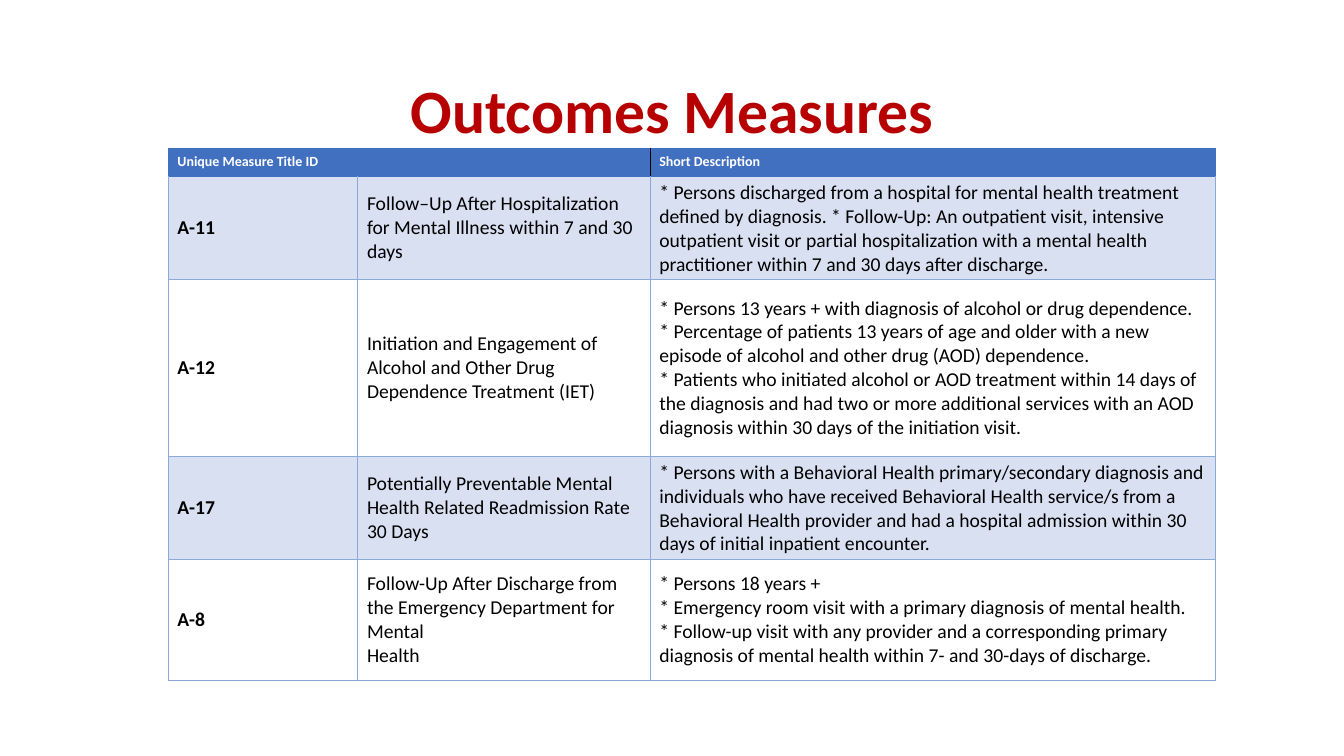
from dataclasses import dataclass, field

from lxml import etree
from pptx import Presentation
from pptx.dml import color
from pptx.enum import text
from pptx.oxml import ns
from pptx.util import Pt


@dataclass(frozen=True)
class Theme:
    face: str = "Calibri"
    title: str = "B70001"
    head: str = "4270C1"
    band: str = "D8E0F2"
    rule: str = "8CA8D8"
    ink: str = "000000"
    white: str = "FFFFFF"
    big: float = 44
    body: float = 14
    small: float = 10


@dataclass(frozen=True)
class Row:
    code: str
    name: str
    about: str
    high: float


@dataclass(frozen=True)
class Edge:
    side: str
    tint: str
    wide: float


@dataclass(frozen=True)
class Grid:
    left: float = 120.2
    top: float = 105.8
    cols: tuple = (135.4, 208.8, 403.9)
    edges: tuple = (0.48, 0.96, 0.73, 0.48)
    pad: dict = field(default_factory=lambda: {
        "margin_left": Pt(6.6), "margin_right": Pt(6.6),
        "margin_top": Pt(3.3), "margin_bottom": Pt(3.3),
        "vertical_anchor": text.MSO_ANCHOR.MIDDLE,
    })


THEME = Theme()
GRID = Grid()
ROWS = [
    Row("Unique Measure Title ID", "", "Short Description", 20.2),
    Row(
        "A-11",
        "Follow–Up After Hospitalization for Mental Illness within 7 and 30 days",
        "* Persons discharged from a hospital for mental health treatment "
        "defined by diagnosis. * Follow-Up: An outpatient visit, intensive "
        "outpatient visit or partial hospitalization with a mental health "
        "practitioner within 7 and 30 days after discharge.",
        73.4,
    ),
    Row(
        "A-12",
        "Initiation and Engagement of Alcohol and Other Drug "
        "Dependence Treatment (IET)",
        "* Persons 13 years + with diagnosis of alcohol or drug dependence.\n"
        "* Percentage of patients 13 years of age and older with a new "
        "episode of alcohol and other drug (AOD) dependence.\n"
        "* Patients who initiated alcohol or AOD treatment within 14 days of "
        "the diagnosis and had two or more additional services with an AOD "
        "diagnosis within 30 days of the initiation visit.",
        126,
    ),
    Row(
        "A-17",
        "Potentially Preventable Mental Health Related Readmission Rate 30 Days",
        "* Persons with a Behavioral Health primary/secondary diagnosis and "
        "individuals who have received Behavioral Health service/s from a "
        "Behavioral Health provider and had a hospital admission within 30 "
        "days of initial inpatient encounter.",
        73.4,
    ),
    Row(
        "A-8",
        "Follow-Up After Discharge from the Emergency Department for Mental\nHealth",
        "* Persons 18 years +\n"
        "* Emergency room visit with a primary diagnosis of mental health.\n"
        "* Follow-up visit with any provider and a corresponding primary "
        "diagnosis of mental health within 7- and 30-days of discharge.",
        86.4,
    ),
]


def assign(item, values: dict) -> None:
    for key, value in values.items():
        setattr(item, key, value)


def style(para, size: float, tint: str, bold: bool) -> None:
    for run in para.runs:
        assign(run.font, {"name": THEME.face, "size": Pt(size), "bold": bold})
        run.font.color.rgb = color.RGBColor.from_string(tint)


def border(cell, edges: list[Edge]) -> None:
    props = cell._tc.get_or_add_tcPr()
    for spot, edge in enumerate(edges):
        line = etree.Element(ns.qn(f"a:ln{edge.side}"), w=str(Pt(edge.wide)))
        fill = etree.SubElement(line, ns.qn("a:solidFill"))
        etree.SubElement(fill, ns.qn("a:srgbClr"), val=edge.tint)
        props.insert(spot, line)


def frame(cell, row: int, col: int) -> None:
    head = row == 0
    tint = THEME.head if head else THEME.rule
    first = 0 if head and col < 2 else col
    last = 2 if head and col < 2 else col + 1
    sides = [
        Edge(side, THEME.ink if head and spot == 2 else tint, GRID.edges[spot])
        for side, spot in (("L", first), ("R", last))
    ]
    roof = Edge("T", THEME.head if row < 2 else tint, 0.61 if head else 0.48)
    border(cell, [*sides, roof, Edge("B", tint, 0.48)])


def paint(cell, row: int) -> None:
    if row and row % 2 == 0:
        cell.fill.background()
        return
    cell.fill.solid()
    shade = THEME.band if row else THEME.head
    cell.fill.fore_color.rgb = color.RGBColor.from_string(shade)


def write(cell, words: str, row: int, col: int) -> None:
    para = cell.text_frame.paragraphs[0]
    para.text = words
    if row:
        style(para, THEME.body, THEME.ink, col == 0)
    else:
        style(para, THEME.small, THEME.white, True)


def title(slide, words: str) -> None:
    box = slide.shapes.add_textbox(Pt(66.2), Pt(28.8), Pt(828), Pt(104.4))
    assign(box.text_frame, {
        "word_wrap": True, "vertical_anchor": text.MSO_ANCHOR.MIDDLE,
    })
    para = box.text_frame.paragraphs[0]
    para.text = words
    assign(para, {"alignment": text.PP_ALIGN.CENTER, "line_spacing": 0.9})
    style(para, THEME.big, THEME.title, True)


def table(slide, rows: list[Row]) -> None:
    wide, high = sum(GRID.cols), sum(row.high for row in rows)
    grid = slide.shapes.add_table(
        len(rows), len(GRID.cols),
        Pt(GRID.left), Pt(GRID.top), Pt(wide), Pt(high),
    ).table
    assign(grid, {"first_row": False, "horz_banding": False})
    for col, size in zip(grid.columns, GRID.cols):
        col.width = Pt(size)
    grid.cell(0, 0).merge(grid.cell(0, 1))
    for r, row in enumerate(rows):
        grid.rows[r].height = Pt(row.high)
        for c, words in enumerate((row.code, row.name, row.about)):
            cell = grid.cell(r, c)
            assign(cell, GRID.pad)
            frame(cell, r, c)
            paint(cell, r)
            if words:
                lines = words.split("\n") if c == 1 else [words]
                write(cell, lines[0], r, c)
                for line in lines[1:]:
                    para = cell.text_frame.add_paragraph()
                    para.text = line
                    style(para, THEME.body, THEME.ink, False)


def main() -> None:
    deck = Presentation()
    assign(deck, {"slide_width": Pt(960), "slide_height": Pt(540)})
    slide = deck.slides.add_slide(deck.slide_layouts[6])
    title(slide, "Outcomes Measures")
    table(slide, ROWS)
    deck.save("out.pptx")


if __name__ == "__main__":
    main()
